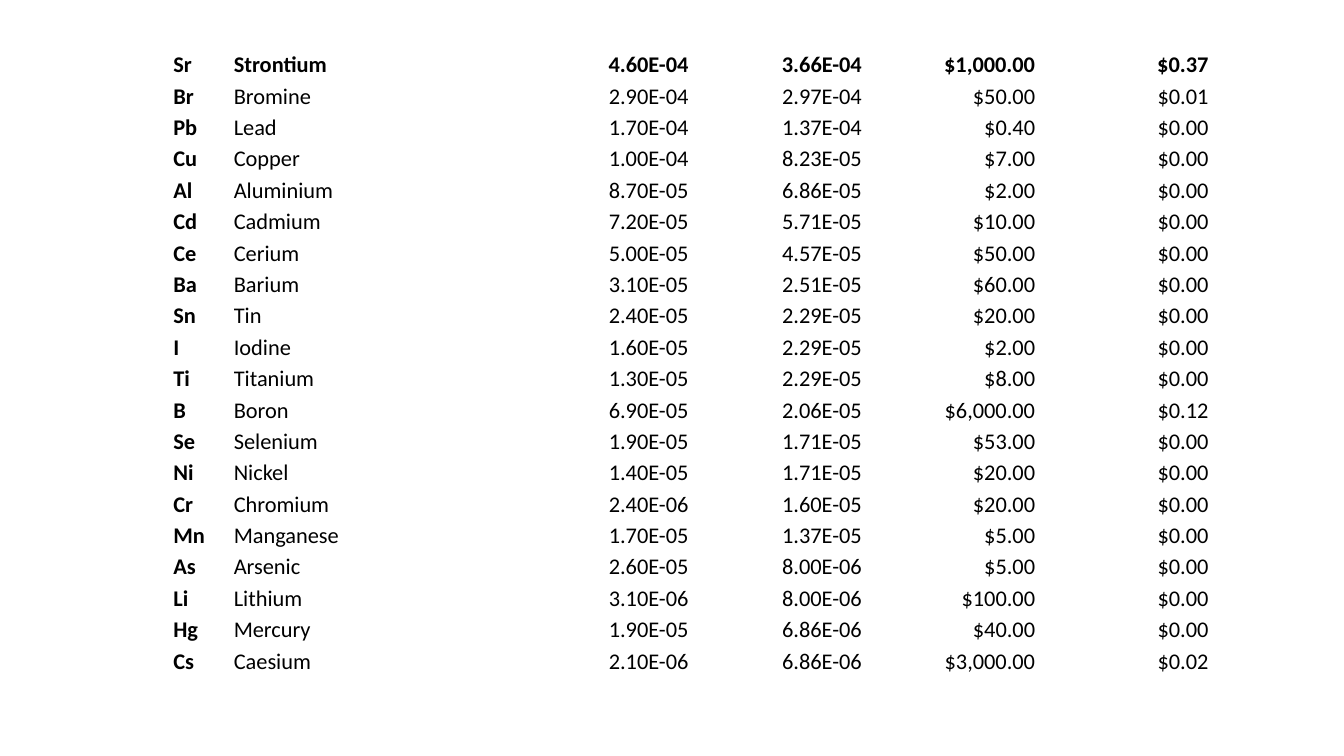
"""Build a slide with a table of trace elements, their abundances, prices and values."""
import pptx
import pptx.dml.color
import pptx.enum.text
import pptx.oxml
import pptx.oxml.ns
import pptx.util

Pt = pptx.util.Pt
ALIGN = pptx.enum.text.PP_ALIGN

ELEMENTS = [
    ("Sr", "Strontium", "4.60E-04", "3.66E-04", "$1,000.00", "$0.37"),
    ("Br", "Bromine", "2.90E-04", "2.97E-04", "$50.00", "$0.01"),
    ("Pb", "Lead", "1.70E-04", "1.37E-04", "$0.40", "$0.00"),
    ("Cu", "Copper", "1.00E-04", "8.23E-05", "$7.00", "$0.00"),
    ("Al", "Aluminium", "8.70E-05", "6.86E-05", "$2.00", "$0.00"),
    ("Cd", "Cadmium", "7.20E-05", "5.71E-05", "$10.00", "$0.00"),
    ("Ce", "Cerium", "5.00E-05", "4.57E-05", "$50.00", "$0.00"),
    ("Ba", "Barium", "3.10E-05", "2.51E-05", "$60.00", "$0.00"),
    ("Sn", "Tin", "2.40E-05", "2.29E-05", "$20.00", "$0.00"),
    ("I", "Iodine", "1.60E-05", "2.29E-05", "$2.00", "$0.00"),
    ("Ti", "Titanium", "1.30E-05", "2.29E-05", "$8.00", "$0.00"),
    ("B", "Boron", "6.90E-05", "2.06E-05", "$6,000.00", "$0.12"),
    ("Se", "Selenium", "1.90E-05", "1.71E-05", "$53.00", "$0.00"),
    ("Ni", "Nickel", "1.40E-05", "1.71E-05", "$20.00", "$0.00"),
    ("Cr", "Chromium", "2.40E-06", "1.60E-05", "$20.00", "$0.00"),
    ("Mn", "Manganese", "1.70E-05", "1.37E-05", "$5.00", "$0.00"),
    ("As", "Arsenic", "2.60E-05", "8.00E-06", "$5.00", "$0.00"),
    ("Li", "Lithium", "3.10E-06", "8.00E-06", "$100.00", "$0.00"),
    ("Hg", "Mercury", "1.90E-05", "6.86E-06", "$40.00", "$0.00"),
    ("Cs", "Caesium", "2.10E-06", "6.86E-06", "$3,000.00", "$0.02"),
]
COL_WIDTHS = [43.2, 107.28, 220.32, 123.84, 123.84, 123.84]
ROW_HEIGHT = 22.28


def rgb(color):
    return pptx.dml.color.RGBColor.from_string(color)


def add_border(cell, side, width, color):
    cell._tc.get_or_add_tcPr().append(pptx.oxml.parse_xml(
        f'<a:{side} {pptx.oxml.ns.nsdecls("a")} w="{Pt(width)}"><a:solidFill>'
        f'<a:srgbClr val="{color}"/></a:solidFill></a:{side}>'))


prs = pptx.Presentation()
prs.slide_width, prs.slide_height = Pt(960), Pt(540)
s = prs.slides.add_slide(prs.slide_layouts[6])

table = s.shapes.add_table(
    len(ELEMENTS), len(COL_WIDTHS), Pt(122.4), Pt(34.56),
    Pt(sum(COL_WIDTHS)), Pt(ROW_HEIGHT * len(ELEMENTS))).table
table.horz_banding = False
for column, width in zip(table.columns, COL_WIDTHS):
    column.width = Pt(width)

for row, element in enumerate(ELEMENTS):
    table.rows[row].height = Pt(ROW_HEIGHT)
    for col, text in enumerate(element):
        cell = table.cell(row, col)
        for side in ("lnL", "lnR", "lnT", "lnB"):
            add_border(cell, side, 3 if row == 0 and side == "lnB" else 1, "FFFFFF")
        cell.fill.solid()
        cell.fill.fore_color.rgb = rgb("FFFFFF")
        cell.margin_left = cell.margin_right = Pt(1.44)
        cell.margin_top = cell.margin_bottom = Pt(0.75)
        cell.vertical_anchor = pptx.enum.text.MSO_ANCHOR.MIDDLE
        p = cell.text_frame.paragraphs[0]
        p.text = text
        p.alignment = ALIGN.LEFT if col < 2 else ALIGN.RIGHT
        p.line_spacing = 1.07
        font = p.runs[0].font
        font.name, font.size = "Calibri", Pt(16)
        font.bold = row == 0 or col == 0
        font.color.rgb = rgb("000000")

prs.save("out.pptx")
